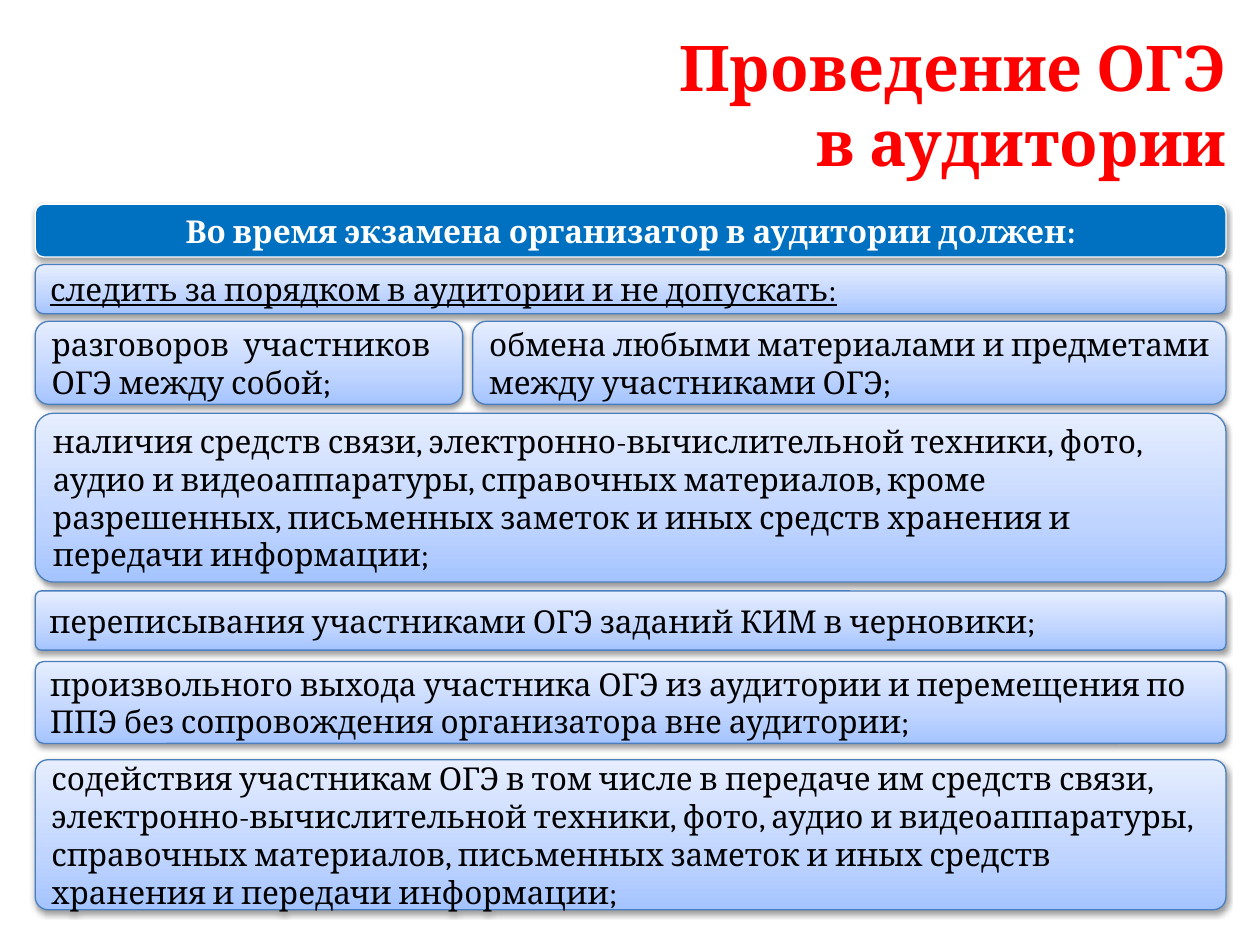
from copy import deepcopy

from lxml import etree
from pptx import Presentation, util as u
from pptx.dml.color import RGBColor
from pptx.enum import shapes, text
from pptx.oxml.ns import qn

W, H = 10, 7.5
LEFT, WIDTH, GAP = 0.28, 9.45, 0.08
FONT = "Cambria"
TITLE = ["Проведение ОГЭ", "в аудитории"]
STOPS = [(0, "A4C4FF"), (0.35, "BFD4FF"), (1, "E6EEFF")]
HEAD = {"fill": "0070C0", "line": "FFFFFF", "color": "FFFFFF", "bold": True,
        "align": text.PP_ALIGN.CENTER}

# top, height, corner, [(share of the row, text, style)]
ROWS = [
    (1.62, 0.42, 0.167, [(1, "Во время экзамена организатор в аудитории должен:", HEAD)]),
    (2.1, 0.39, 0.167, [(1, "следить за порядком в аудитории и не допускать:",
                         {"underline": True})]),
    (2.55, 0.66, 0.167, [
        (0.362, "разговоров  участников ОГЭ между собой;", {}),
        (0.638, "обмена любыми материалами и предметами между участниками ОГЭ;", {})]),
    (3.28, 1.34, 0.108, [
        (1, "наличия средств связи, электронно-вычислительной техники, фото, "
            "аудио и видеоаппаратуры, справочных материалов, кроме разрешенных, "
            "письменных заметок и иных средств хранения и передачи информации;", {})]),
    (4.69, 0.47, 0.103, [(1, "переписывания участниками ОГЭ заданий КИМ в черновики;", {})]),
    (5.25, 0.65, 0.103, [
        (1, "произвольного выхода участника ОГЭ из аудитории и перемещения по "
            "ППЭ без сопровождения организатора вне аудитории;", {})]),
    (6.03, 1.19, 0.085, [
        (1, "содействия участникам ОГЭ в том числе в передаче им средств связи, "
            "электронно-вычислительной техники, фото, аудио и видеоаппаратуры, "
            "справочных материалов, письменных заметок и иных средств хранения "
            "и передачи информации;", {})]),
]


def rgb(value):
    return RGBColor.from_string(value)


def write(sp, lines, size, color, align, bold=False, underline=False):
    tf = sp.text_frame
    tf.word_wrap = True
    tf.vertical_anchor = text.MSO_ANCHOR.MIDDLE
    tf.text = "\n".join(lines)
    for p in tf.paragraphs:
        p.alignment = align
        f = p.font
        f.name, f.size, f.bold, f.underline = FONT, u.Pt(size), bold, underline
        f.color.rgb = rgb(color)


def shade(fill):
    fill.gradient()
    fill.gradient_angle = 90
    first = fill.gradient_stops[0]._gs
    first.addnext(deepcopy(first))
    for stop, (position, color) in zip(fill.gradient_stops, STOPS):
        stop.position = position
        stop.color.rgb = rgb(color)


def add_shadow(sp):
    sp.shadow.inherit = False
    effects = sp._element.spPr.find(qn("a:effectLst"))
    outer = etree.SubElement(effects, qn("a:outerShdw"), blurRad=str(u.Pt(3.1)),
                             dist=str(u.Pt(1.6)), dir="5400000", rotWithShape="0")
    color = etree.SubElement(outer, qn("a:srgbClr"), val="000000")
    etree.SubElement(color, qn("a:alpha"), val="38000")


def add_card(s, box, corner, words, style):
    sp = s.shapes.add_shape(shapes.MSO_SHAPE.ROUNDED_RECTANGLE, *map(u.Inches, box))
    sp.adjustments[0] = corner
    if "fill" in style:
        sp.fill.solid()
        sp.fill.fore_color.rgb = rgb(style["fill"])
    else:
        shade(sp.fill)
    sp.line.color.rgb = rgb(style.get("line", "4B7EBC"))
    sp.line.width = u.Pt(0.75)
    add_shadow(sp)
    write(sp, [words], 18, style.get("color", "000000"),
          style.get("align", text.PP_ALIGN.LEFT),
          style.get("bold", False), style.get("underline", False))


def main():
    prs = Presentation()
    prs.slide_width, prs.slide_height = u.Inches(W), u.Inches(H)
    s = prs.slides.add_slide(prs.slide_layouts[6])
    title = s.shapes.add_textbox(*map(u.Inches, (1.14, 0.2, 8.69, 1.25)))
    write(title, TITLE, 36, "FF0000", text.PP_ALIGN.RIGHT, bold=True)
    for top, height, corner, cards in ROWS:
        x = LEFT
        room = WIDTH - GAP * (len(cards) - 1)
        for share, words, style in cards:
            add_card(s, (x, top, room * share, height), corner, words, style)
            x += room * share + GAP
    prs.save("out.pptx")


if __name__ == "__main__":
    main()
